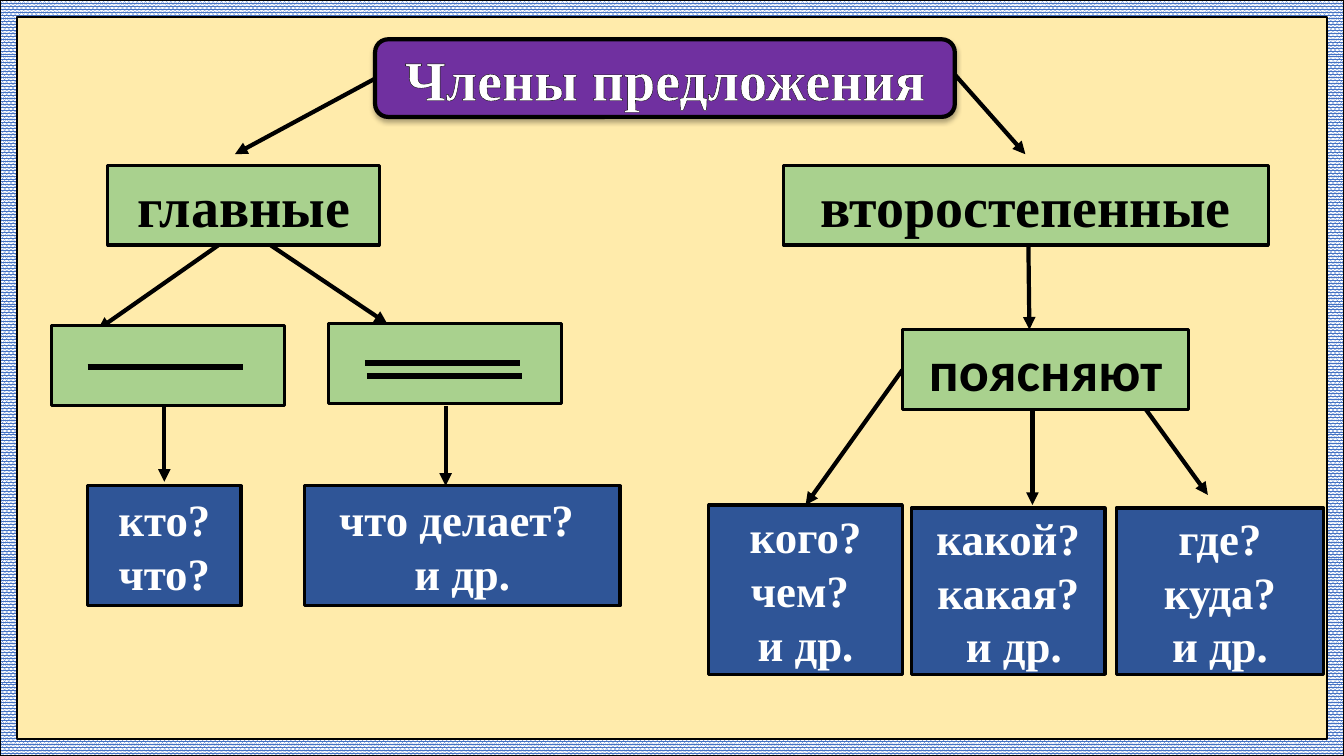
from dataclasses import dataclass

import pptx
import pptx.dml.color
import pptx.enum.dml
import pptx.enum.shapes
import pptx.enum.text
import pptx.oxml
import pptx.oxml.ns
import pptx.util

Inches = pptx.util.Inches
RGBColor = pptx.dml.color.RGBColor
Shapes = pptx.enum.shapes.MSO_SHAPE

CREAM = RGBColor(0xFF, 0xEB, 0xAB)
FRAME_BLUE = RGBColor(0x44, 0x72, 0xC4)
PURPLE = RGBColor(0x70, 0x30, 0xA0)
GREEN = RGBColor(0xA9, 0xD1, 0x8E)
BLUE = RGBColor(0x2F, 0x55, 0x97)
BLACK = RGBColor(0, 0, 0)
WHITE = RGBColor(0xFF, 0xFF, 0xFF)

SERIF = "Times New Roman"
SANS = "Calibri"
LABEL_HEIGHT = 0.79
DRAWING_NS = pptx.oxml.ns.nsdecls("a")


@dataclass
class Box:
    left: float
    top: float
    width: float
    height: float

    def inner(self, x, y, width, height):
        return Box(self.left + x, self.top + y, width, height)

    def point(self, x, y):
        return self.left + x, self.top + y

    def lengths(self):
        return [Inches(v) for v in (self.left, self.top, self.width, self.height)]


def add_panel(page, box, kind, fill, line_width):
    panel = page.shapes.add_shape(kind, *box.lengths())
    panel.shadow.inherit = False
    panel.fill.solid()
    panel.fill.fore_color.rgb = fill
    panel.line.color.rgb = BLACK
    panel.line.width = pptx.util.Pt(line_width)
    return panel


def write(shape, lines, size, color, font=SERIF):
    frame = shape.text_frame
    frame.word_wrap = True
    frame.vertical_anchor = pptx.enum.text.MSO_ANCHOR.MIDDLE
    frame.text = "\n".join(lines)
    for para in frame.paragraphs:
        para.alignment = pptx.enum.text.PP_ALIGN.CENTER
        para.font.name = font
        para.font.size = pptx.util.Pt(size)
        para.font.bold = True
        para.font.color.rgb = color


def add_label(page, box, text="", font=SERIF):
    label = add_panel(page, box, Shapes.RECTANGLE, GREEN, 2.25)
    if text:
        write(label, [text], 40, BLACK, font)


def add_questions(page, box, lines):
    write(add_panel(page, box, Shapes.RECTANGLE, BLUE, 2.25), lines, 32, WHITE)


def add_line(page, start, end, width=3.0, arrow=True):
    line = page.shapes.add_connector(
        pptx.enum.shapes.MSO_CONNECTOR.STRAIGHT, *map(Inches, start + end))
    line.line.color.rgb = BLACK
    line.line.width = pptx.util.Pt(width)
    properties = line._element.spPr
    if arrow:
        properties.find(pptx.oxml.ns.qn("a:ln")).append(
            pptx.oxml.parse_xml(f'<a:tailEnd {DRAWING_NS} type="triangle"/>'))
    properties.append(pptx.oxml.parse_xml(f"<a:effectLst {DRAWING_NS}/>"))


def draw_backdrop(page, box):
    page.background.fill.solid()
    page.background.fill.fore_color.rgb = CREAM
    border = add_panel(page, box, Shapes.FRAME, FRAME_BLUE, 1.5)
    border.adjustments[0] = 0.022
    border.fill.patterned()
    border.fill.pattern = pptx.enum.dml.MSO_PATTERN.PERCENT_80
    border.fill.fore_color.rgb = FRAME_BLUE
    border.fill.back_color.rgb = WHITE


def draw_heading(page, box):
    # Arrows to the two branches
    add_line(page, box.point(0, 0.39), box.point(-1.39, 1.14))
    add_line(page, box.point(box.width, 0.35), box.point(box.width + 0.7, 1.14))

    # Rounded plate with a soft shadow
    plate = add_panel(page, box, Shapes.ROUNDED_RECTANGLE, PURPLE, 3)
    effects = plate._element.spPr.find(pptx.oxml.ns.qn("a:effectLst"))
    effects.append(pptx.oxml.parse_xml(
        f'<a:outerShdw {DRAWING_NS} blurRad="44450" dist="27940" dir="5400000">'
        '<a:srgbClr val="000000"><a:alpha val="32000"/></a:srgbClr></a:outerShdw>'))

    # Title over the plate, with outlined letters
    title = page.shapes.title
    title.left, title.top, title.width, title.height = box.lengths()
    write(title, ["Члены предложения"], 40, WHITE)
    run = title.text_frame.paragraphs[0].runs[0]
    run._r.get_or_add_rPr().insert(0, pptx.oxml.parse_xml(
        f'<a:ln {DRAWING_NS} w="9525"><a:solidFill><a:srgbClr val="000000"/>'
        '</a:solidFill></a:ln>'))
    page.shapes._spTree.append(title._element)


def draw_main_branch(page, box):
    # Arrows
    for start, end in [((1.66, 0.79), (0.46, 1.63)), ((2.17, 0.79), (3.33, 1.57)),
                       ((1.12, 2.36), (1.12, 3.14)), ((3.91, 2.39), (3.91, 3.18))]:
        add_line(page, box.point(*start), box.point(*end))

    # Labels: the branch name, the subject and the predicate
    add_label(page, box.inner(0.56, 0, 2.69, LABEL_HEIGHT), "главные")
    for x, y in [(0, 1.59), (2.75, 1.57)]:
        add_label(page, box.inner(x, y, 2.31, LABEL_HEIGHT))

    # Single and double underlines
    for x, y in [(0.36, 2), (3.11, 1.96), (3.13, 2.09)]:
        add_line(page, box.point(x, y), box.point(x + 1.54, y), 4.5, arrow=False)

    # Questions
    add_questions(page, box.inner(0.36, 3.18, 1.52, 1.19), ["кто? что?"])
    add_questions(page, box.inner(2.51, 3.18, 3.13, 1.19), ["что делает? ", "и др."])


def draw_secondary_branch(page, box):
    # Arrows
    for start, end in [((3.17, 0.81), (3.18, 1.63)), ((1.92, 2.03), (0.96, 3.37)),
                       ((3.21, 2.42), (3.21, 3.37)), ((4.29, 2.36), (4.95, 3.27))]:
        add_line(page, box.point(*start), box.point(*end))

    # Labels
    add_label(page, box.inner(0.74, 0, 4.81, LABEL_HEIGHT), "второстепенные")
    add_label(page, box.inner(1.92, 1.63, 2.84, LABEL_HEIGHT), "поясняют", SANS)

    # Questions, all standing on the bottom of the branch
    for x, width, height, lines in [
            (0, 1.92, 1.68, ["кого? чем? ", "и др."]),
            (2.01, 1.92, 1.65, ["какой?", "какая?", " и др."]),
            (4.04, 2.06, 1.65, ["где?", "куда?", "и др."])]:
        add_questions(page, box.inner(x, box.height - height, width, height), lines)


def main():
    deck = pptx.Presentation()
    deck.slide_width, deck.slide_height = Inches(13.33), Inches(7.5)
    page = deck.slides.add_slide(deck.slide_layouts.get_by_name("Title Only"))
    draw_backdrop(page, Box(0, 0, 13.33, 7.5))
    draw_heading(page, Box(3.72, 0.39, 5.75, 0.77))
    draw_main_branch(page, Box(0.51, 1.64, 5.64, 4.37))
    draw_secondary_branch(page, Box(7.03, 1.64, 6.1, 5.05))
    deck.save("out.pptx")


if __name__ == "__main__":
    main()
